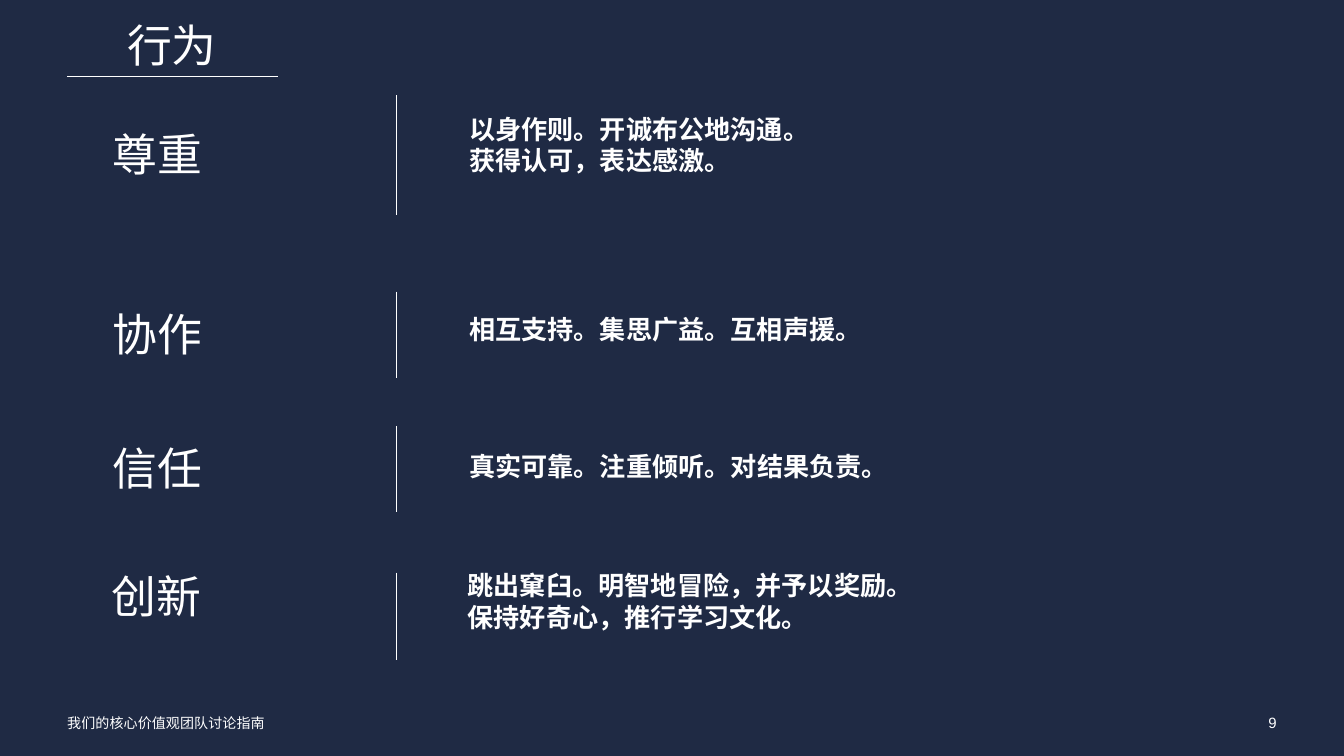
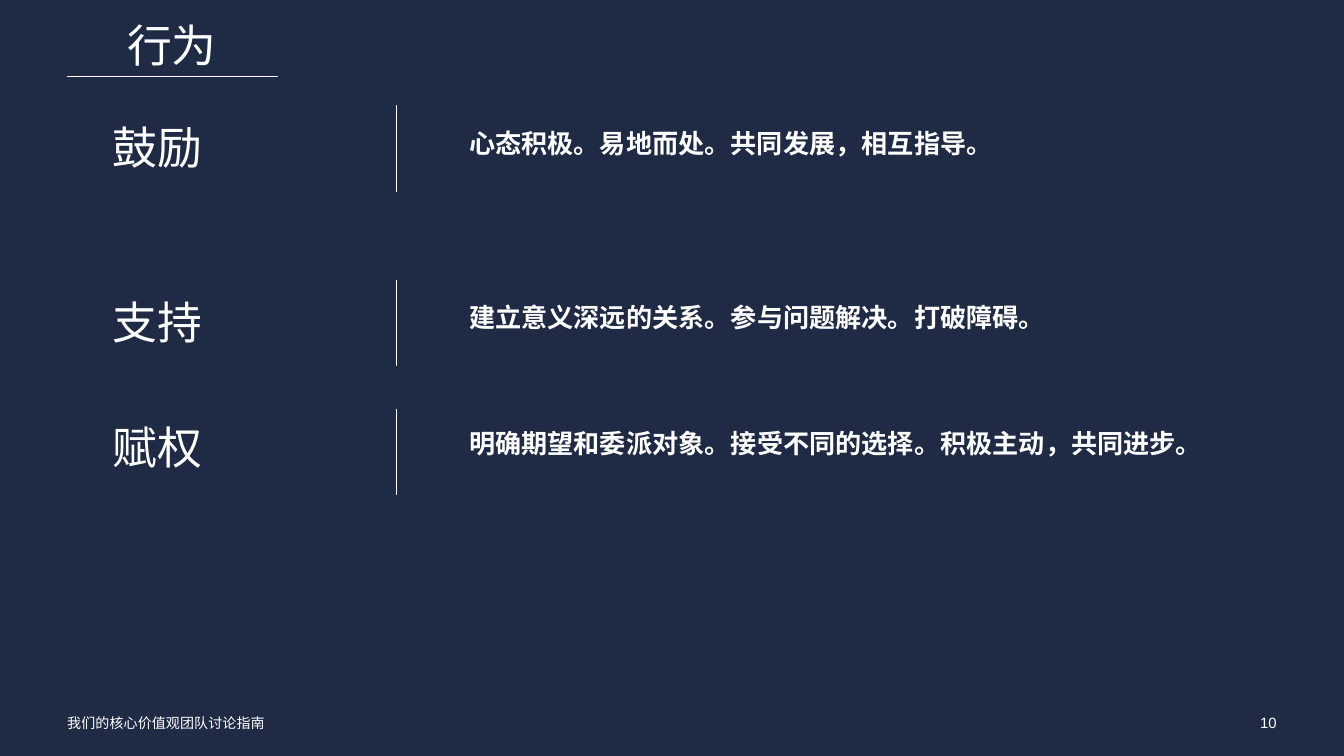
from copy import deepcopy

from lxml import etree
from pptx import Presentation
from pptx import util as u
from pptx.dml.color import RGBColor
from pptx.enum import shapes, text
from pptx.oxml.ns import qn

NAVY, WHITE = "1F2A44", "FFFFFF"
HEADING_FONT, BODY_FONT = "Arial Narrow", "Arial"
LEFT, RULE_X, NAME_X, DETAIL_X = 0.5, 2.95, 0.84, 3.49
NAME_WIDTH = 2.19
FOOTER = "我们的核心价值观团队讨论指南"

# Per value: name, (name top, height), (rule top, bottom),
# behaviours, (behaviours top, width, height), shift to the left
PAGES = {
    9: [
        ("尊重", (0.71, 0.92), (0.71, 1.6),
         "以身作则。开诚布公地沟通。\n获得认可，表达感激。", (0.84, 4.67, 1.12), 0),
        ("协作", (2.17, 0.67), (2.17, 2.81),
         "相互支持。集思广益。互相声援。", (2.33, 4.64, 0.79), 0),
        ("信任", (3.17, 0.67), (3.17, 3.81),
         "真实可靠。注重倾听。对结果负责。", (3.35, 4.59, 0.67), 0),
        ("创新", (4, 0.92), (4.26, 4.91),
         "跳出窠臼。明智地冒险，并予以奖励。保持好奇心，推行学习文化。",
         (4.24, 3.37, 1.12), 0.01),
    ],
    10: [
        ("鼓励", (0.78, 0.67), (0.78, 1.43),
         "心态积极。易地而处。共同发展，相互指导。", (0.95, 4.64, 0.79), 0),
        ("支持", (2.08, 0.67), (2.08, 2.72),
         "建立意义深远的关系。参与问题解决。打破障碍。", (2.24, 4.59, 0.67), 0),
        ("赋权", (3.01, 0.67), (3.04, 3.68),
         "明确期望和委派对象。接受不同的选择。积极主动，共同进步。",
         (3.18, 5.45, 0.67), 0),
    ],
}


def color(hex_value):
    return RGBColor.from_string(hex_value)


class Deck:
    """Holds the shared style and the slide being filled."""

    def __init__(self):
        self.prs = Presentation()
        self.prs.slide_width = u.Inches(10)
        self.prs.slide_height = self.prs.slide_width * 9 // 16
        self.slide = None

    def new_slide(self, title, number):
        self.slide = self.prs.slides.add_slide(self.prs.slide_layouts[6])
        background = self.slide.background.fill
        background.solid()
        background.fore_color.rgb = color(NAVY)
        self.label(FOOTER, LEFT, 5.3, 4.35, 0.2, 7.5, HEADING_FONT, inset=0.02)
        self.label(str(number), 9, 5.3, 0.5, 0.2, 8, BODY_FONT, inset=0.01,
                   align=text.PP_ALIGN.RIGHT)
        self.heading(title, 0, 0, 2.56, 0.71, align=text.PP_ALIGN.CENTER)
        self.rule(LEFT, 0.57, 2.07, 0.57)

    def label(self, words, left, top, width, height, size, font, bold=False,
              inset=0, align=text.PP_ALIGN.LEFT):
        """Adds white text; inset is the top margin. Returns its text frame."""
        box = self.slide.shapes.add_textbox(*map(u.Inches, (left, top, width, height)))
        frame = box.text_frame
        frame.word_wrap = True
        frame.margin_left = frame.margin_right = frame.margin_bottom = 0
        frame.margin_top = u.Inches(inset)
        paragraph = frame.paragraphs[0]
        paragraph.text = words
        paragraph.alignment = align
        for run in paragraph.runs:
            run.font.size = u.Pt(size)
            run.font.name = font
            run.font.bold = bold
            run.font.color.rgb = color(WHITE)
        for line_break in paragraph._p.findall(qn("a:br")):
            line_break.append(deepcopy(paragraph.runs[0]._r.rPr))
        return frame

    def heading(self, words, left, top, width, height, align=text.PP_ALIGN.LEFT):
        frame = self.label(words, left, top, width, height, 24, HEADING_FONT, align=align)
        frame.vertical_anchor = text.MSO_ANCHOR.MIDDLE
        frame.paragraphs[0].line_spacing = 0.9

    def rule(self, x1, y1, x2, y2):
        line = self.slide.shapes.add_connector(
            shapes.MSO_CONNECTOR.STRAIGHT, *map(u.Inches, (x1, y1, x2, y2)))
        line.line.color.rgb = color(WHITE)
        line.line.width = u.Pt(1)
        etree.SubElement(line._element.spPr, qn("a:effectLst"))

    def value_row(self, name, name_span, rule_span, behaviours, area, shift):
        top, width, height = area
        self.label(behaviours, DETAIL_X - shift, top, width, height, 14, BODY_FONT, bold=True)
        self.heading(name, NAME_X - shift, name_span[0], NAME_WIDTH, name_span[1])
        self.rule(RULE_X, rule_span[0], RULE_X, rule_span[1])


def main():
    deck = Deck()
    for number, values in PAGES.items():
        deck.new_slide("行为", number)
        for value in values:
            deck.value_row(*value)
    deck.prs.save("out.pptx")


if __name__ == "__main__":
    main()
